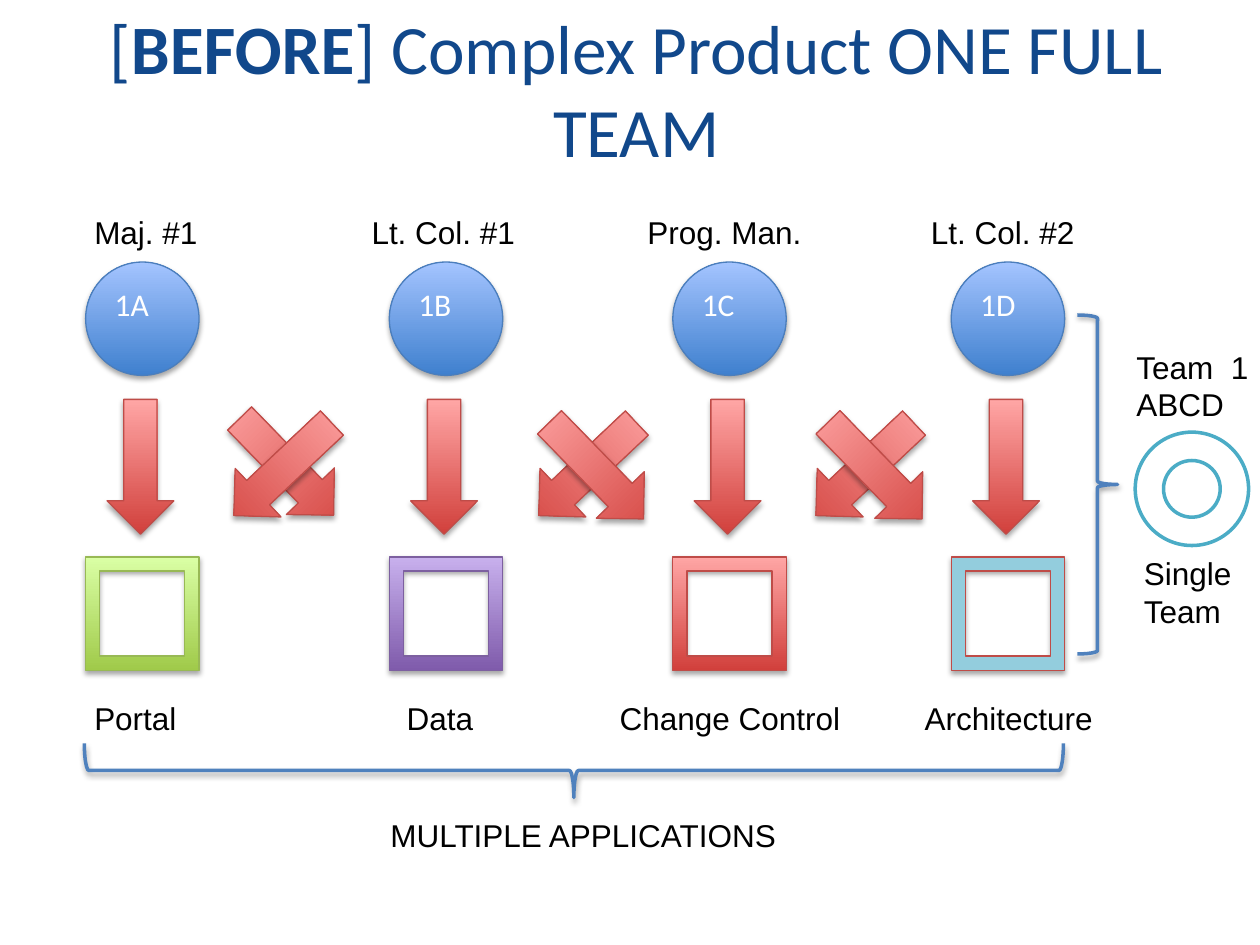
from lxml import etree
from pptx import Presentation, util as u
from pptx.dml.color import RGBColor
from pptx.enum import shapes, text
from pptx.oxml.ns import qn

NAVY = RGBColor(0x11, 0x48, 0x8B)
BLACK = RGBColor(0, 0, 0)
WHITE = RGBColor(255, 255, 255)
BRACE_BLUE = RGBColor(0x4F, 0x81, 0xBD)
TEAL = RGBColor(0x4B, 0xAC, 0xC6)
# Each palette: bottom colour, top colour, outline
BLUE = (RGBColor(0x3F, 0x80, 0xCE), RGBColor(0xA4, 0xC4, 0xFF), RGBColor(0x4B, 0x7E, 0xBC))
RED = (RGBColor(0xD1, 0x40, 0x3C), RGBColor(0xFF, 0xA6, 0xA5), RGBColor(0xBF, 0x4C, 0x48))
GREEN = (RGBColor(0xA0, 0xCA, 0x4A), RGBColor(0xDA, 0xFF, 0xA5), RGBColor(0x98, 0xB9, 0x55))
PURPLE = (RGBColor(0x7F, 0x5B, 0xAB), RGBColor(0xC8, 0xB0, 0xED), RGBColor(0x7D, 0x60, 0xA0))
AQUA = (RGBColor(0x93, 0xCD, 0xDD), RGBColor(0x93, 0xCD, 0xDD), RED[2])
KIND = shapes.MSO_SHAPE

deck = Presentation()
deck.slide_width, deck.slide_height = u.Inches(10), u.Inches(7.5)
page = deck.slides.add_slide(deck.slide_layouts[5])


def add_label(left, top, width, *lines):
    """Unwrapped black text, one paragraph a line."""
    box = page.shapes.add_textbox(u.Inches(left), u.Inches(top), u.Inches(width),
                                  u.Inches(0.1 + 0.3 * len(lines)))
    frame = box.text_frame
    frame.word_wrap = False
    for number, line in enumerate(lines):
        para = frame.add_paragraph() if number else frame.paragraphs[0]
        span = para.add_run()
        span.text = line
        span.font.name, span.font.size = "Arial", u.Pt(18)
        span.font.color.rgb = BLACK


def add_figure(kind, left, top, width, height, line, weight, palette=None, shadow=True, turn=0):
    """Outlined preset shape with an optional vertical gradient and soft shadow."""
    figure = page.shapes.add_shape(kind, u.Inches(left), u.Inches(top),
                                   u.Inches(width), u.Inches(height))
    figure.rotation = turn
    figure.line.color.rgb, figure.line.width = line, u.Pt(weight)
    if palette is None:
        figure.fill.background()
    elif palette[0] == palette[1]:
        figure.fill.solid()
        figure.fill.fore_color.rgb = palette[0]
    else:
        figure.fill.gradient()
        figure.fill.gradient_angle = 90
        for stop, colour in zip(figure.fill.gradient_stops, palette):
            stop.color.rgb = colour
    figure.shadow.inherit = False
    if shadow:
        effects = figure._element.spPr.find(qn("a:effectLst"))
        outer = etree.SubElement(effects, qn("a:outerShdw"), blurRad=str(u.Pt(3.1)),
                                 dist=str(u.Pt(1.8)), dir="5400000", rotWithShape="0")
        tone = etree.SubElement(outer, qn("a:srgbClr"), val="000000")
        etree.SubElement(tone, qn("a:alpha"), val="35000")
    return figure


# Title
title = page.shapes.title
title.left, title.top = u.Inches(0.33), u.Inches(0.3)
title.width, title.height = u.Inches(9.44), u.Inches(0.8)
frame = title.text_frame
frame.word_wrap, frame.auto_size = True, text.MSO_AUTO_SIZE.NONE
frame.vertical_anchor = text.MSO_ANCHOR.MIDDLE
para = frame.paragraphs[0]
para.alignment = text.PP_ALIGN.CENTER
for words, bold in (("[", False), ("BEFORE", True), ("] Complex Product ONE FULL TEAM", False)):
    span = para.add_run()
    span.text = words
    span.font.name, span.font.size, span.font.bold = "Calibri", u.Pt(39.6), bold
    span.font.color.rgb = NAVY

# Grid: four columns of person, arrow and application
SIDE, ARROW_W, ARROW_H = 0.9, 0.53, 1.07
ROLE_ROW, PERSON_ROW, ARROW_ROW, APP_ROW, NAME_ROW = 1.64, 2.08, 3.17, 4.42, 5.5
# column left, code, role (left, width), application (left, width), palette
columns = [
    (0.68, "1A", "Maj. #1", 0.65, 1.03, "Portal", 0.65, 0.86, GREEN),
    (3.09, "1B", "Lt. Col. #1", 2.85, 1.35, "Data", 3.13, 0.74, PURPLE),
    (5.34, "1C", "Prog. Man.", 5.04, 1.44, "Change Control", 4.82, 1.97, RED),
    (7.55, "1D", "Lt. Col. #2", 7.29, 1.35, "Architecture", 7.24, 1.56, AQUA),
]
for left, code, role, role_left, role_width, app, app_left, app_width, palette in columns:
    add_label(role_left, ROLE_ROW, role_width, role)
    person = add_figure(KIND.OVAL, left, PERSON_ROW, SIDE, SIDE, BLUE[2], 0.75, BLUE)
    person.text_frame.vertical_anchor = text.MSO_ANCHOR.TOP
    para = person.text_frame.paragraphs[0]
    para.alignment = text.PP_ALIGN.LEFT
    span = para.add_run()
    span.text = code
    span.font.name, span.font.size = "Calibri", u.Pt(18)
    span.font.color.rgb = WHITE
    add_figure(KIND.DOWN_ARROW, left + 0.17, ARROW_ROW, ARROW_W, ARROW_H, RED[2], 0.75, RED)
    add_figure(KIND.FRAME, left, APP_ROW, SIDE, SIDE, palette[2], 0.75, palette)
    add_label(app_left, NAME_ROW, app_width, app)

# Crossed arrows between the columns, back to front
TO_LEFT, TO_RIGHT = 46.7, 315.8
crossings = [(2.01, 3.17, TO_RIGHT), (1.98, 3.19, TO_LEFT),
             (4.4, 3.19, TO_LEFT), (4.47, 3.2, TO_RIGHT),
             (6.6, 3.19, TO_LEFT), (6.68, 3.2, TO_RIGHT)]
for left, top, turn in crossings:
    add_figure(KIND.DOWN_ARROW, left, top, ARROW_W, ARROW_H, RED[2], 0.75, RED, turn=turn)

# Applications brace
add_figure(KIND.LEFT_BRACE, 4.34, 2.23, 0.43, 7.77, BRACE_BLUE, 2, turn=270)
add_label(3, 6.43, 3.29, "MULTIPLE APPLICATIONS")

# Team brace and ring
add_figure(KIND.RIGHT_BRACE, 8.55, 2.5, 0.32, 2.69, BRACE_BLUE, 2)
add_label(8.92, 2.71, 1.11, "Team  1", "ABCD")
add_figure(KIND.DONUT, 9.01, 3.43, SIDE, SIDE, TEAL, 2, (WHITE, WHITE), shadow=False)
add_label(8.98, 4.35, 0.9, "Single", "Team")

deck.save("out.pptx")
